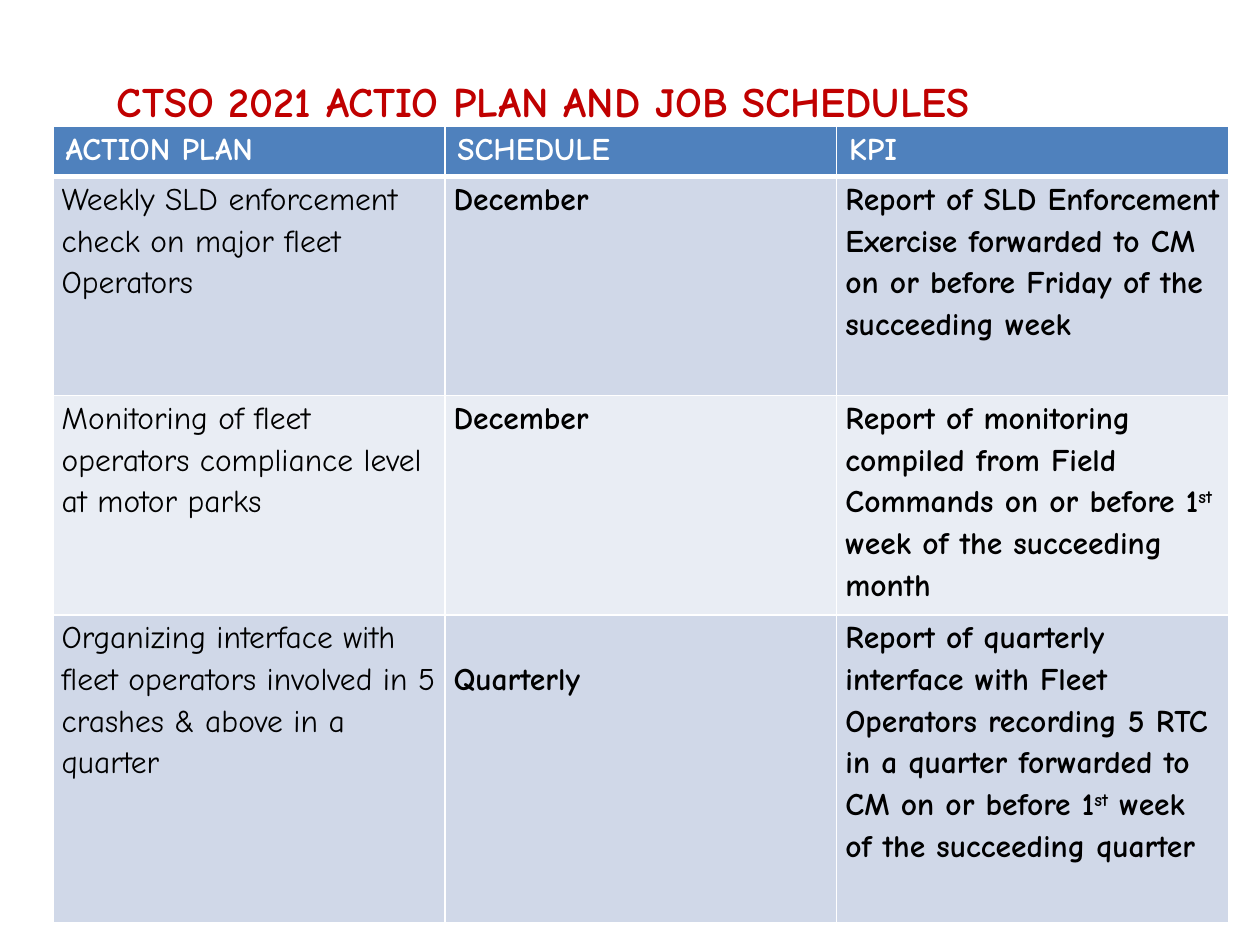
"""Build the CTSO 2021 action plan and job schedules slide."""
from lxml.etree import SubElement
from pptx import Presentation
from pptx.dml.color import RGBColor
from pptx.enum.text import MSO_ANCHOR, PP_ALIGN
from pptx.oxml.ns import qn
from pptx.util import Inches, Pt

FONT = "Comic Neue"
COLORS = {
    "title": "C00000", "header": "4F81BD", "odd": "D0D8E8",
    "even": "E9EDF4", "border": "FFFFFF", "header_text": "FFFFFF", "body": "000000",
}
TITLE = "CTSO 2021 ACTIO PLAN AND JOB SCHEDULES"
HEADINGS = ["ACTION PLAN", "SCHEDULE", "KPI"]
ORDINAL = "st"
PLANS = [
    (["Weekly SLD enforcement check on major fleet Operators"],
     ["December"],
     ["Report of SLD Enforcement Exercise forwarded to CM on or before Friday of the succeeding week"]),
    (["Monitoring of fleet operators compliance level at motor parks"],
     ["December"],
     ["Report of monitoring compiled from Field Commands on or before 1", ORDINAL,
      " week of the succeeding month"]),
    (["Organizing interface with fleet operators involved in 5 crashes & above in a quarter"],
     ["Quarterly"],
     ["Report of quarterly interface with Fleet Operators recording 5 RTC in a quarter "
      "forwarded to CM on or before 1", ORDINAL, " week of the succeeding quarter"]),
]
COLUMN_WIDTH = 3.11
ROW_HEIGHTS = [0.4, 1.74, 1.74, 2.44]
LINE_HEIGHT = 0.33


def add_runs(paragraph, texts, size, color, bold):
    for text in texts:
        run = paragraph.add_run()
        run.text = text
        run.font.name = FONT
        run.font.size = Pt(size)
        run.font.bold = bold
        run.font.color.rgb = RGBColor.from_string(COLORS[color])
        if text == ORDINAL:
            run.font._element.set("baseline", "30000")


def style_cell(cell, fill, top, bottom):
    properties = cell._tc.get_or_add_tcPr()
    for side, width in (("L", 1), ("R", 1), ("T", top), ("B", bottom)):
        border = SubElement(properties, qn(f"a:ln{side}"), w=str(Pt(width)))
        SubElement(SubElement(border, qn("a:solidFill")), qn("a:srgbClr"), val=COLORS["border"])
    cell.fill.solid()
    cell.fill.fore_color.rgb = RGBColor.from_string(COLORS[fill])


def add_title(slide):
    frame = slide.shapes.add_textbox(Inches(0.83), Inches(0.42), Inches(8.5), Inches(0.75)).text_frame
    frame.word_wrap = True
    frame.vertical_anchor = MSO_ANCHOR.MIDDLE
    frame.paragraphs[0].alignment = PP_ALIGN.LEFT
    add_runs(frame.paragraphs[0], [TITLE], 24, "title", True)


def add_schedule(slide):
    schedule = slide.shapes.add_table(
        len(ROW_HEIGHTS), len(HEADINGS), Inches(0.42), Inches(1),
        Inches(COLUMN_WIDTH * len(HEADINGS)), Inches(sum(ROW_HEIGHTS))).table
    for column in schedule.columns:
        column.width = Inches(COLUMN_WIDTH)
    for row, height in zip(schedule.rows, ROW_HEIGHTS):
        row.height = Inches(height)

    for c, heading in enumerate(HEADINGS):
        cell = schedule.cell(0, c)
        style_cell(cell, "header", 1, 3)
        add_runs(cell.text_frame.paragraphs[0], [heading], 18, "header_text", True)

    for r, plan in enumerate(PLANS, start=1):
        for c, texts in enumerate(plan):
            cell = schedule.cell(r, c)
            style_cell(cell, "odd" if r % 2 else "even", 3 if r == 1 else 1, 1)
            cell.margin_left = cell.margin_right = Inches(0.07)
            cell.margin_top = Inches(LINE_HEIGHT if texts == ["Quarterly"] else 0)
            cell.margin_bottom = 0
            paragraph = cell.text_frame.paragraphs[0]
            paragraph.line_spacing = 1.15
            add_runs(paragraph, texts, 18, "body", c > 0)


def main():
    deck = Presentation()
    deck.slide_width, deck.slide_height = Inches(10), Inches(7.5)
    slide = deck.slides.add_slide(deck.slide_layouts[6])
    add_title(slide)
    add_schedule(slide)
    deck.save("out.pptx")


if __name__ == "__main__":
    main()
